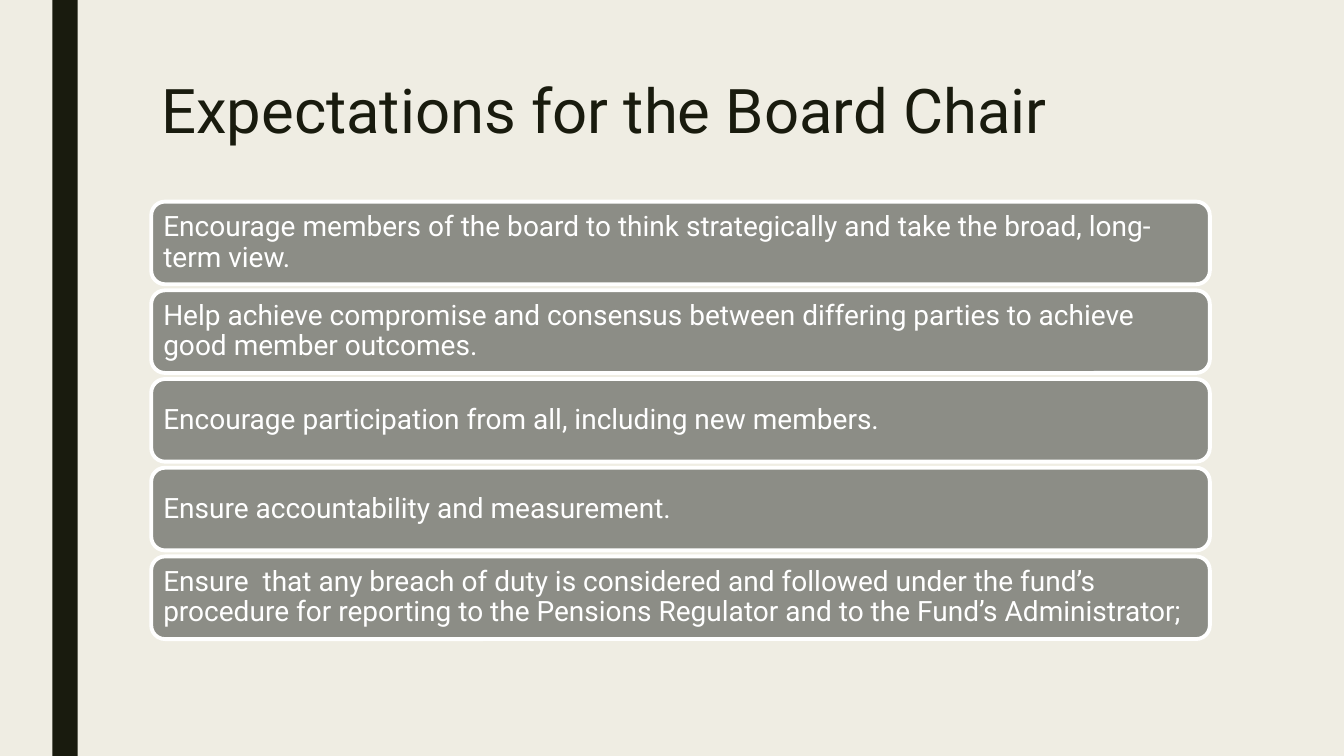
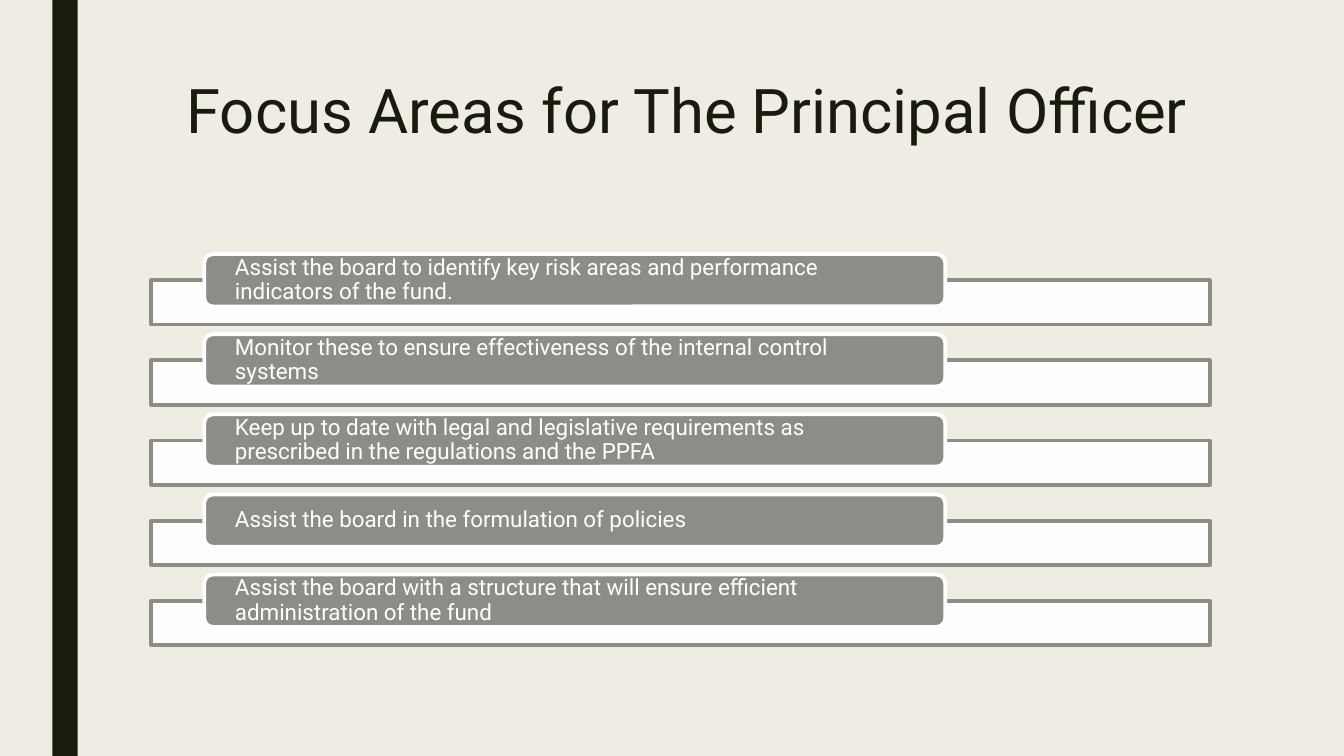
from pptx import Presentation
from pptx.dml.color import RGBColor
from pptx.enum.shapes import MSO_SHAPE as Shape
from pptx.enum.text import MSO_ANCHOR as Anchor, MSO_AUTO_SIZE as Fit, PP_ALIGN as Align
from pptx.oxml.ns import qn
from pptx.util import Inches, Pt
from lxml import etree
from dataclasses import dataclass


# Content
DUTIES = [
    "Encourage members of the board to think strategically and take the broad, long-term view.",
    "Help achieve compromise and consensus between differing parties to achieve good member outcomes.",
    "Encourage participation from all, including new members.",
    "Ensure accountability and measurement.",
    "Ensure  that any breach of duty is considered and followed under the fund’s procedure "
    "for reporting to the Pensions Regulator and to the Fund’s Administrator;",
]
FOCUS = [
    "Assist the board to identify key risk areas and performance indicators of the fund.",
    "Monitor these to ensure effectiveness of the internal control systems",
    "Keep up to date with legal and legislative requirements as prescribed in the regulations and the PPFA",
    "Assist the board in the formulation of policies",
    "Assist the board with a structure that will ensure efficient administration of the fund",
]


# Theme: colours, type sizes and the shared column
@dataclass(frozen=True)
class Theme:
    paper: str = "EFEDE3"
    ink: str = "191B0E"
    gray: str = "8C8D86"
    white: str = "FFFFFF"
    font: str = "Roboto"
    title: int = 44
    large: int = 20
    small: int = 16
    edge: float = 2.75
    lead: float = 0.9


T = Theme()
WIDE, HIGH = 13.33, 7.5
LEFT, SPAN = 1.5, 10.5


def paint(fill, color):
    fill.solid()
    fill.fore_color.rgb = RGBColor.from_string(color)


def add_box(slide, kind, area, color, edge=None):
    box = slide.shapes.add_shape(kind, *map(Inches, area))
    box.shadow.inherit = False
    paint(box.fill, color)
    if edge:
        paint(box.line.fill, edge)
        box.line.width = Pt(T.edge)
    else:
        box.line.fill.background()
    return box


def write(shape, text, size, color, anchor, pad):
    frame = shape.text_frame
    frame.word_wrap = True
    frame.auto_size = Fit.NONE
    frame.vertical_anchor = anchor
    frame.margin_left = frame.margin_right = Inches(pad[0])
    frame.margin_top = frame.margin_bottom = Inches(pad[1])
    para = frame.paragraphs[0]
    para.alignment = Align.LEFT
    para.line_spacing = T.lead
    run = para.add_run()
    run.text = text
    run.font.name = T.font
    run.font.size = Pt(size)
    run.font.color.rgb = RGBColor.from_string(color)


def add_page(deck, layout, title, left, height):
    slide = deck.slides.add_slide(layout)
    head = slide.shapes.title
    head.left, head.top = Inches(left), Inches(0.75)
    head.width, head.height = Inches(LEFT + SPAN - left), Inches(height)
    write(head, title, T.title, T.ink, Anchor.TOP, (0.1, 0.05))
    return slide


def tops(first, last, count):
    step = (last - first) / (count - 1)
    return [first + step * row for row in range(count)]


def add_label(slide, text, area, size, pad):
    label = add_box(slide, Shape.ROUNDED_RECTANGLE, area, T.gray, T.white)
    write(label, text, size, T.white, Anchor.MIDDLE, pad)


def add_band(slide, top):
    band = add_box(slide, Shape.RECTANGLE, (LEFT, top, SPAN, 0.44), T.white, T.gray)
    tint = band.fill._xPr.find(qn("a:solidFill"))[0]
    etree.SubElement(tint, qn("a:alpha")).set("val", "90000")


def main():
    deck = Presentation()
    deck.slide_width, deck.slide_height = Inches(WIDE), Inches(HIGH)
    layout = deck.slide_layouts.get_by_name("Title Only")
    paint(deck.slide_master.background.fill, T.paper)

    # Slide 1: stacked bars
    chair = add_page(deck, layout, "Expectations for the Board Chair", LEFT, 1.62)

    # Side band, moved to the layout so both slides share it
    side = add_box(chair, Shape.RECTANGLE, (0.52, 0, 0.25, HIGH), T.ink)
    layout.shapes.element.insert(2, side.element)

    for text, top in zip(DUTIES, tops(2, 5.52, len(DUTIES))):
        add_label(chair, text, (LEFT, top, SPAN, 0.82), T.large, (0.08, 0.08))

    # Slide 2: labels overlapping the top of wide bands
    officer = add_page(deck, layout, "Focus Areas for The Principal Officer", 1.75, 1.2)
    for text, top in zip(FOCUS, tops(2.52, 5.7, len(FOCUS))):
        add_band(officer, top + 0.26)
        add_label(officer, text, (LEFT + SPAN * 0.05, top, SPAN * 0.7, 0.52), T.small, (0.28, 0))

    deck.save("out.pptx")


if __name__ == "__main__":
    main()
